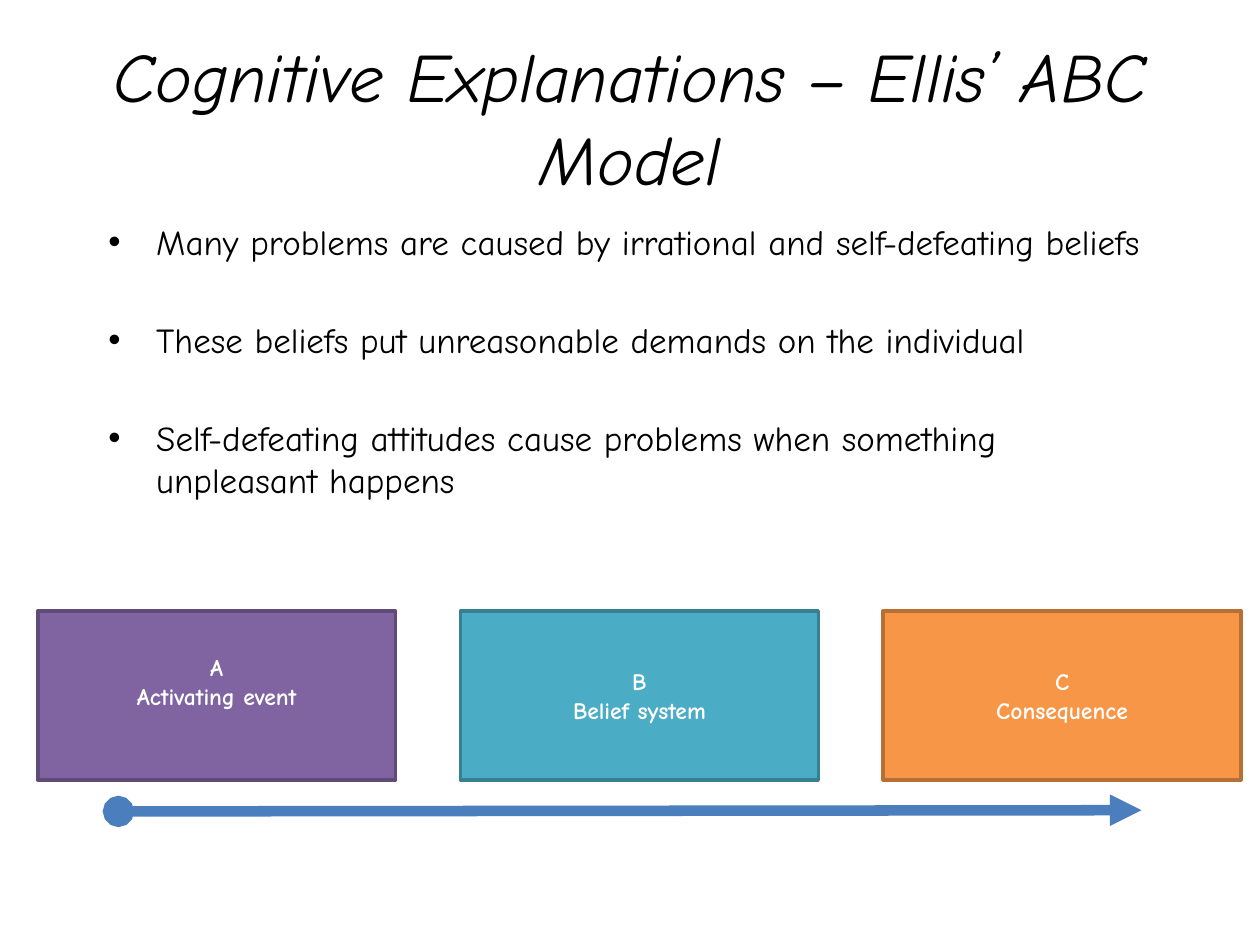
from pptx import Presentation
from pptx import util as u
from pptx.dml.color import RGBColor
from pptx.enum import shapes, text
from pptx.oxml.ns import qn
from lxml import etree


def color(value):
    return RGBColor.from_string(value)


class SlideBuilder:
    """Hold the slide and its style, and add each kind of element."""

    font = "Comic Neue"
    ink = "000000"

    def __init__(self, slide):
        self.slide = slide

    def style(self, paragraph, size, ink, bold=False, italic=False):
        font = paragraph.font
        font.name, font.size = self.font, u.Pt(size)
        font.bold, font.italic = bold, italic
        font.color.rgb = color(ink)

    def place(self, holder, left, top, width, height, anchor):
        holder.left, holder.top = u.Inches(left), u.Inches(top)
        holder.width, holder.height = u.Inches(width), u.Inches(height)
        frame = holder.text_frame
        frame.word_wrap = True
        frame.auto_size = text.MSO_AUTO_SIZE.NONE
        frame.vertical_anchor = anchor
        return frame

    def title(self, wording):
        frame = self.place(self.slide.shapes.title, 0.5, 0.3, 9, 1.25,
                           text.MSO_ANCHOR.MIDDLE)
        frame.text = wording
        heading = frame.paragraphs[0]
        heading.alignment = text.PP_ALIGN.CENTER
        self.style(heading, 39.6, self.ink, italic=True)

    def bullets(self, points):
        frame = self.place(self.slide.placeholders[1], 0.76, 1.7, 8.62, 2.68,
                           text.MSO_ANCHOR.TOP)
        frame.text = "\n".join(points)
        for index, point in enumerate(frame.paragraphs):
            point.space_before = u.Pt(32 if index else 0)
            properties = point._p.get_or_add_pPr()
            properties.set("marL", str(u.Inches(0.38)))
            properties.set("indent", str(-u.Inches(0.38)))
            bullet_font = etree.SubElement(properties, qn("a:buFont"))
            bullet_font.set("typeface", "Arial")
            etree.SubElement(properties, qn("a:buChar")).set("char", "•")
            self.style(point, 20, self.ink)

    def stage(self, left, wording, fill, border, bottom_inset):
        box = self.slide.shapes.add_shape(
            shapes.MSO_SHAPE.RECTANGLE, u.Inches(left), u.Inches(4.85),
            u.Inches(2.84), u.Inches(1.34))
        box.shadow.inherit = False
        box.fill.solid()
        box.fill.fore_color.rgb = color(fill)
        box.line.color.rgb = color(border)
        box.line.width = u.Pt(2)
        frame = box.text_frame
        frame.word_wrap = True
        frame.vertical_anchor = text.MSO_ANCHOR.MIDDLE
        frame.margin_bottom = u.Inches(bottom_inset)
        frame.text = wording
        for label in frame.paragraphs:
            label.alignment = text.PP_ALIGN.CENTER
            self.style(label, 13.5, "FFFFFF", bold=True)

    def arrow(self, start, end):
        arrow = self.slide.shapes.add_connector(
            shapes.MSO_CONNECTOR.STRAIGHT,
            *(u.Inches(value) for value in (*start, *end)))
        arrow.line.color.rgb = color("4B7EBC")
        arrow.line.width = u.Pt(6)
        outline = arrow.line._get_or_add_ln()
        for tag, kind in (("a:headEnd", "oval"), ("a:tailEnd", "triangle")):
            etree.SubElement(outline, qn(tag)).set("type", kind)
        etree.SubElement(arrow._element.spPr, qn("a:effectLst"))


def main():
    deck = Presentation()
    deck.slide_width, deck.slide_height = u.Inches(10), u.Inches(7.5)
    builder = SlideBuilder(deck.slides.add_slide(deck.slide_layouts[1]))
    builder.title("Cognitive Explanations – Ellis’ ABC Model")
    builder.bullets([
        "Many problems are caused by irrational and self-defeating beliefs",
        "These beliefs put unreasonable demands on the individual",
        "Self-defeating attitudes cause problems when something unpleasant happens",
    ])
    stages = [
        ("A\nActivating event", "8064A2", "5F4A78", 0.27),
        ("B\nBelief system", "4BACC6", "377F92", 0.05),
        ("C\nConsequence", "F79646", "B76F34", 0.05),
    ]
    for index, stage in enumerate(stages):
        builder.stage(0.3 + 3.355 * index, *stage)
    builder.arrow((0.94, 6.44), (9.06, 6.43))
    deck.save("out.pptx")


if __name__ == "__main__":
    main()
